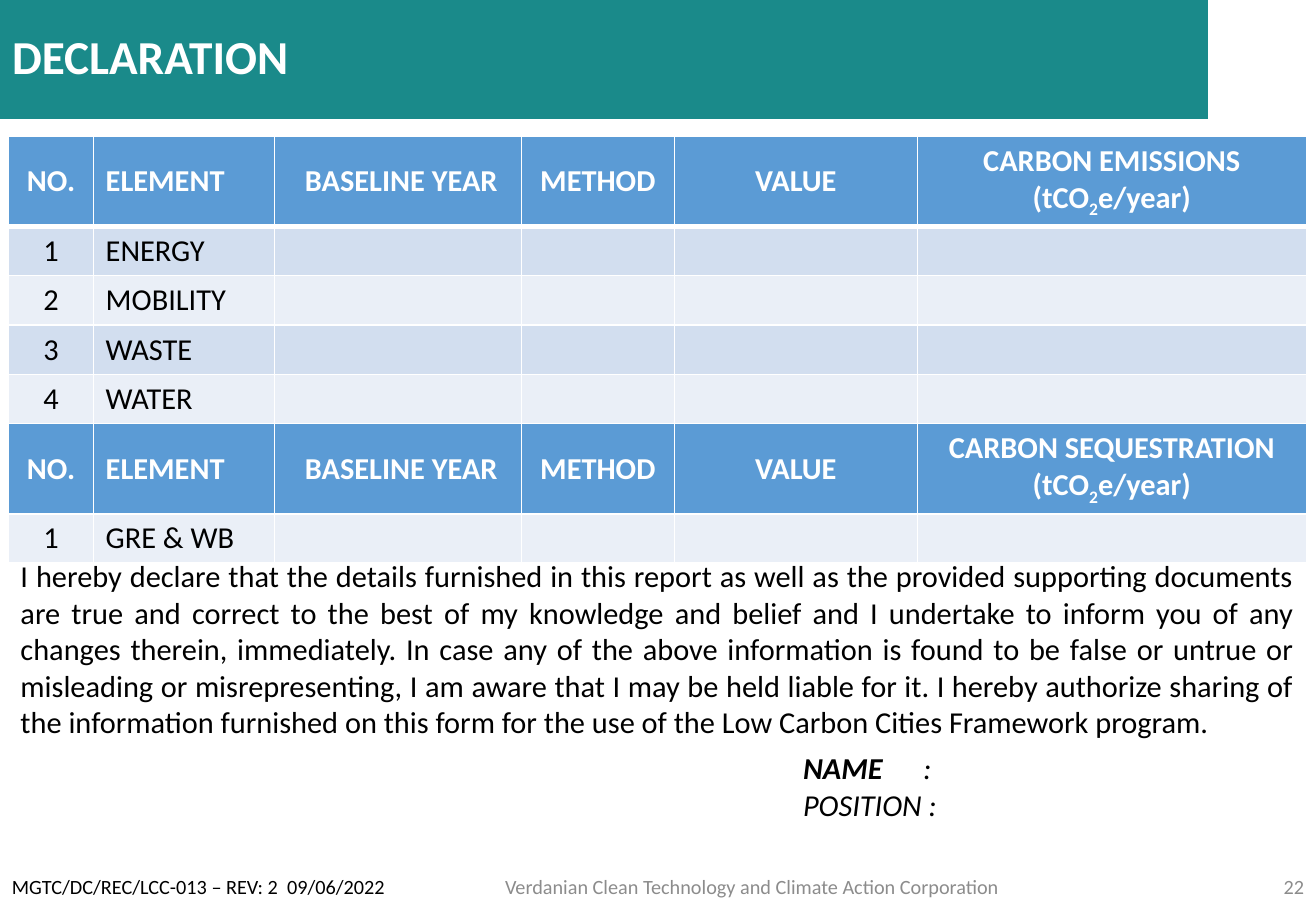
from dataclasses import dataclass

import lxml.etree
import pptx
import pptx.dml.color
import pptx.enum.text
import pptx.oxml.ns
import pptx.util

Inches = pptx.util.Inches
Pt = pptx.util.Pt
RGBColor = pptx.dml.color.RGBColor
Align = pptx.enum.text.PP_ALIGN
Anchor = pptx.enum.text.MSO_ANCHOR
qn = pptx.oxml.ns.qn

FONT = "Calibri"
TEAL = RGBColor(0x1A, 0x8A, 0x8A)
HEADER_BLUE = RGBColor(0x5B, 0x9B, 0xD5)
BAND_DARK = RGBColor(0xD2, 0xDE, 0xEF)
BAND_LIGHT = RGBColor(0xEA, 0xEF, 0xF7)
GRAY = RGBColor(0x8C, 0x8C, 0x8C)
BLACK = RGBColor(0, 0, 0)
WHITE = RGBColor(255, 255, 255)

COLUMN_WIDTHS = (0.7, 1.49, 2.03, 1.26, 2, 3.2)
HEADER_HEIGHT = 0.74
ROW_HEIGHT = 0.4
DECLARATION = (
    "I hereby declare that the details furnished in this report as well as the provided "
    "supporting documents are true and correct to the best of my knowledge and belief and "
    "I undertake to inform you of any changes therein, immediately. In case any of the above "
    "information is found to be false or untrue or misleading or misrepresenting, I am aware "
    "that I may be held liable for it. I hereby authorize sharing of the information furnished "
    "on this form for the use of the Low Carbon Cities Framework program."
)


@dataclass(frozen=True)
class Section:
    quantity: str
    elements: tuple[str, ...]


@dataclass(frozen=True)
class FooterPart:
    text: str
    left: float
    width: float
    align: Align
    color: RGBColor


SECTIONS = (
    Section("CARBON EMISSIONS", ("ENERGY", "MOBILITY", "WASTE", "WATER")),
    Section("CARBON SEQUESTRATION", ("GRE & WB",)),
)
FOOTER = (
    FooterPart("MGTC/DC/REC/LCC-013 – REV: 2  09/06/2022", 0, 3.49, Align.LEFT, BLACK),
    FooterPart("Verdanian Clean Technology and Climate Action Corporation",
               2.44, 7.5, Align.CENTER, GRAY),
    FooterPart("22", 9.94, 0.89, Align.RIGHT, GRAY),
)


def add_text(paragraph, text: str, *, size: float = 18, color: RGBColor = BLACK,
             bold: bool = False, italic: bool = False, subscript: bool = False,
             align: Align = Align.LEFT) -> None:
    paragraph.alignment = align
    run = paragraph.add_run()
    run.text = text
    run.font.name = FONT
    run.font.size = Pt(size)
    run.font.bold = bold
    run.font.italic = italic
    run.font.color.rgb = color
    if subscript:
        run._r.get_or_add_rPr().set("baseline", "-25000")


def add_text_frame(slide, left: float, top: float, width: float, height: float,
                   anchor: Anchor = Anchor.TOP):
    box = slide.shapes.add_textbox(Inches(left), Inches(top), Inches(width), Inches(height))
    box.text_frame.word_wrap = True
    box.text_frame.vertical_anchor = anchor
    return box.text_frame


def add_title(slide) -> None:
    title = slide.shapes.title
    title.left, title.top = Inches(0), Inches(0)
    title.width, title.height = Inches(9.94), Inches(0.98)
    title.fill.solid()
    title.fill.fore_color.rgb = TEAL
    frame = title.text_frame
    frame.auto_size = pptx.enum.text.MSO_AUTO_SIZE.NONE
    frame.vertical_anchor = Anchor.MIDDLE
    frame.paragraphs[0].line_spacing = 0.9
    add_text(frame.paragraphs[0], "DECLARATION", size=28, color=WHITE, bold=True)


def format_cell(cell, fill: RGBColor, top_width: float, bottom_width: float) -> None:
    properties = cell._tc.get_or_add_tcPr()
    for side, width in (("L", 1), ("R", 1), ("T", top_width), ("B", bottom_width)):
        line = lxml.etree.SubElement(properties, qn(f"a:ln{side}"), w=str(Pt(width)))
        solid = lxml.etree.SubElement(line, qn("a:solidFill"))
        lxml.etree.SubElement(solid, qn("a:srgbClr"), val=str(WHITE))
    cell.fill.solid()
    cell.fill.fore_color.rgb = fill


def fill_header(cells, quantity: str) -> None:
    labels = ("NO.", "ELEMENT", " BASELINE YEAR", "METHOD", "VALUE", f"{quantity} (tCO")
    for column, (cell, label) in enumerate(zip(cells, labels)):
        cell.vertical_anchor = Anchor.MIDDLE
        style = dict(color=WHITE, bold=True, align=Align.LEFT if column == 1 else Align.CENTER)
        paragraph = cell.text_frame.paragraphs[0]
        add_text(paragraph, label, **style)
        if column == len(labels) - 1:
            add_text(paragraph, "2", subscript=True, **style)
            add_text(paragraph, "e/year)", **style)


def add_element_table(slide) -> None:
    row_count = sum(1 + len(section.elements) for section in SECTIONS)
    height = len(SECTIONS) * HEADER_HEIGHT + (row_count - len(SECTIONS)) * ROW_HEIGHT
    table = slide.shapes.add_table(
        row_count, len(COLUMN_WIDTHS), Inches(0.07), Inches(1.12),
        Inches(sum(COLUMN_WIDTHS)), Inches(height)).table
    table.horz_banding = False
    for column, width in zip(table.columns, COLUMN_WIDTHS):
        column.width = Inches(width)

    row_index = 0
    for section in SECTIONS:
        for number, element in enumerate(("", *section.elements)):
            row = table.rows[row_index]
            is_header = number == 0
            row.height = Inches(HEADER_HEIGHT if is_header else ROW_HEIGHT)
            band = BAND_DARK if row_index % 2 else BAND_LIGHT
            for cell in row.cells:
                format_cell(cell, HEADER_BLUE if is_header else band,
                            3 if row_index == 1 else 1, 3 if row_index == 0 else 1)
            if is_header:
                fill_header(row.cells, section.quantity)
            else:
                add_text(row.cells[0].text_frame.paragraphs[0], str(number), align=Align.CENTER)
                add_text(row.cells[1].text_frame.paragraphs[0], element)
            row_index += 1


def add_signature(slide) -> None:
    frame = add_text_frame(slide, 6.51, 6.12, 3.35, 0.71)
    name = frame.paragraphs[0]
    tabs = lxml.etree.SubElement(name._p.get_or_add_pPr(), qn("a:tabLst"))
    lxml.etree.SubElement(tabs, qn("a:tab"), pos=str(Inches(0.99)), algn="l")
    add_text(name, "NAME", bold=True, italic=True)
    add_text(name, "\t:", italic=True)
    add_text(frame.add_paragraph(), "POSITION :", italic=True)


def main() -> None:
    presentation = pptx.Presentation()
    presentation.slide_width = Inches(10.83)
    presentation.slide_height = Inches(7.5)
    slide = presentation.slides.add_slide(presentation.slide_layouts[5])
    add_title(slide)
    add_element_table(slide)
    declaration = add_text_frame(slide, 0.07, 4.54, 10.68, 1.62)
    add_text(declaration.paragraphs[0], DECLARATION, align=Align.JUSTIFY)
    add_signature(slide)
    for part in FOOTER:
        frame = add_text_frame(slide, part.left, 7.1, part.width, 0.4, Anchor.MIDDLE)
        add_text(frame.paragraphs[0], part.text, size=12, color=part.color, align=part.align)
    presentation.save("out.pptx")


if __name__ == "__main__":
    main()
